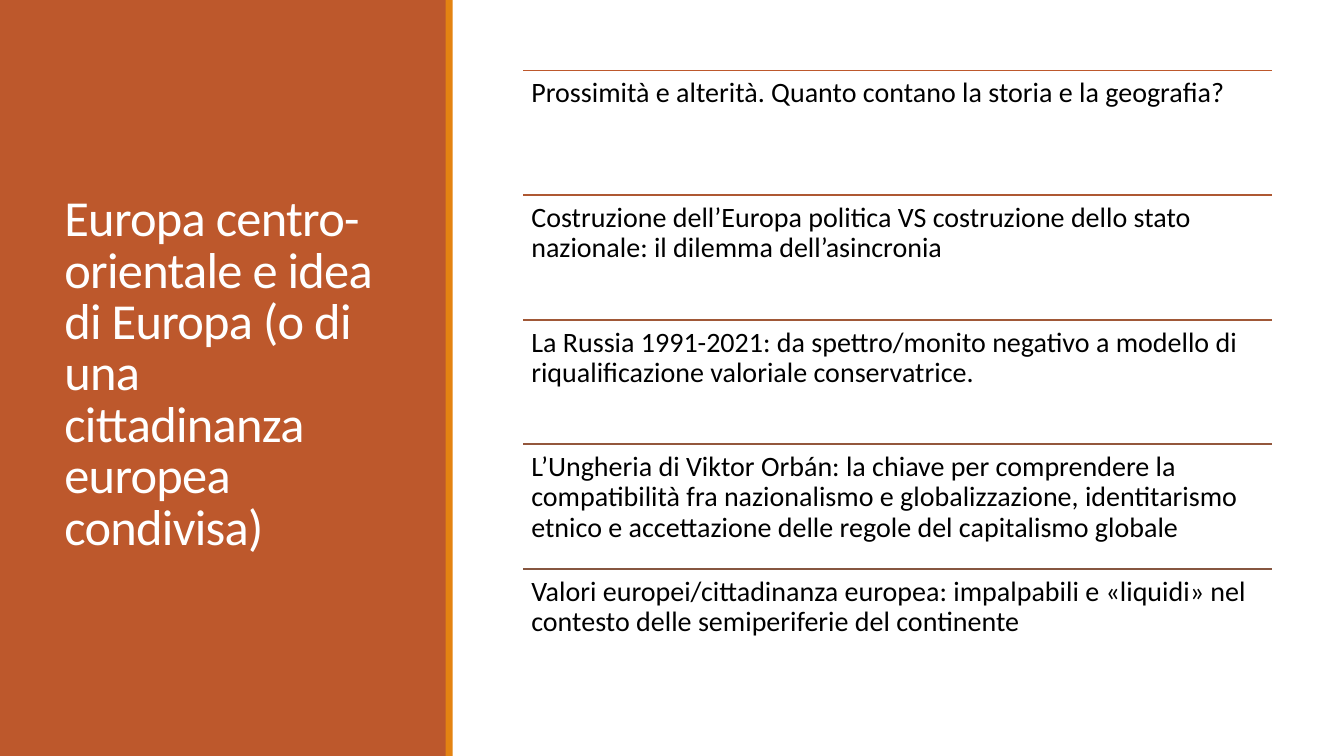
"""Build the slide on Central-Eastern Europe and the idea of Europe."""
import pptx
import pptx.dml.color
import pptx.enum.shapes
import pptx.enum.text
import pptx.oxml.ns
import pptx.util
from lxml import etree

Inches = pptx.util.Inches
Pt = pptx.util.Pt
RGBColor = pptx.dml.color.RGBColor
ANCHOR = pptx.enum.text.MSO_ANCHOR

WHITE = RGBColor(0xFF, 0xFF, 0xFF)
BLACK = RGBColor(0x00, 0x00, 0x00)
RUST = RGBColor(0xBD, 0x58, 0x2C)
ORANGE = RGBColor(0xE4, 0x83, 0x12)

TITLE = "Europa centro-orientale e idea di Europa (o di una cittadinanza europea condivisa)"
TOPICS = [
    ("Prossimità e alterità. Quanto contano la storia e la geografia?", RUST),
    ("Costruzione dell’Europa politica VS costruzione dello stato nazionale: "
     "il dilemma dell’asincronia", RGBColor(0xAE, 0x58, 0x32)),
    ("La Russia 1991-2021: da spettro/monito negativo a modello di "
     "riqualificazione valoriale conservatrice.", RGBColor(0xA0, 0x58, 0x37)),
    ("L’Ungheria di Viktor Orbán: la chiave per comprendere la compatibilità "
     "fra nazionalismo e globalizzazione, identitarismo etnico e accettazione "
     "delle regole del capitalismo globale", RGBColor(0x93, 0x57, 0x3C)),
    ("Valori europei/cittadinanza europea: impalpabili e «liquidi» nel "
     "contesto delle semiperiferie del continente", RGBColor(0x86, 0x56, 0x40)),
]
PANELS = [(0, 4.43, RUST), (4.42, 0.07, ORANGE)]
SLIDE_W, SLIDE_H = 13.33, 7.5
LIST_LEFT, LIST_TOP, LIST_W, LIST_H = 5.19, 0.7, 7.43, 6.18


def add_text(s, text, left, top, width, height, size, color, line_spacing,
             inset=(0.1, 0.05), anchor=ANCHOR.TOP, tracking=None):
    sp = s.shapes.add_textbox(Inches(left), Inches(top), Inches(width), Inches(height))
    tf = sp.text_frame
    tf.word_wrap = True
    tf.vertical_anchor = anchor
    tf.margin_left = tf.margin_right = Inches(inset[0])
    tf.margin_top = tf.margin_bottom = Inches(inset[1])
    p = tf.paragraphs[0]
    p.line_spacing = line_spacing
    r = p.add_run()
    r.text = text
    r.font.name = "Calibri"
    r.font.size = Pt(size)
    r.font.color.rgb = color
    if tracking is not None:
        r.font._element.set("spc", str(int(tracking * 100)))


def add_panel(s, left, width, color):
    sp = s.shapes.add_shape(pptx.enum.shapes.MSO_SHAPE.RECTANGLE,
                            Inches(left), 0, Inches(width), Inches(SLIDE_H))
    sp.shadow.inherit = False
    sp.fill.solid()
    sp.fill.fore_color.rgb = color
    sp.line.fill.background()


def add_rule(s, left, top, width, color):
    line = s.shapes.add_connector(pptx.enum.shapes.MSO_CONNECTOR.STRAIGHT, Inches(left),
                                  Inches(top), Inches(left + width), Inches(top))
    line.line.color.rgb = color
    line.line.width = Pt(1.25)
    etree.SubElement(line._element.spPr, pptx.oxml.ns.qn("a:effectLst"))


def main():
    prs = pptx.Presentation()
    prs.slide_width, prs.slide_height = Inches(SLIDE_W), Inches(SLIDE_H)
    s = prs.slides.add_slide(prs.slide_layouts[6])
    for panel in PANELS:
        add_panel(s, *panel)
    add_text(s, TITLE, 0.54, 0.57, 3.37, 6.31, 36, WHITE, 0.85,
             anchor=ANCHOR.MIDDLE, tracking=-0.5)
    row_h = LIST_H / len(TOPICS)
    for i, (text, color) in enumerate(TOPICS):
        top = LIST_TOP + i * row_h
        add_rule(s, LIST_LEFT, top, LIST_W, color)
        add_text(s, text, LIST_LEFT, top, LIST_W, row_h, 20, BLACK, 0.9, inset=(0.08, 0.08))
    prs.save("out.pptx")


if __name__ == "__main__":
    main()
